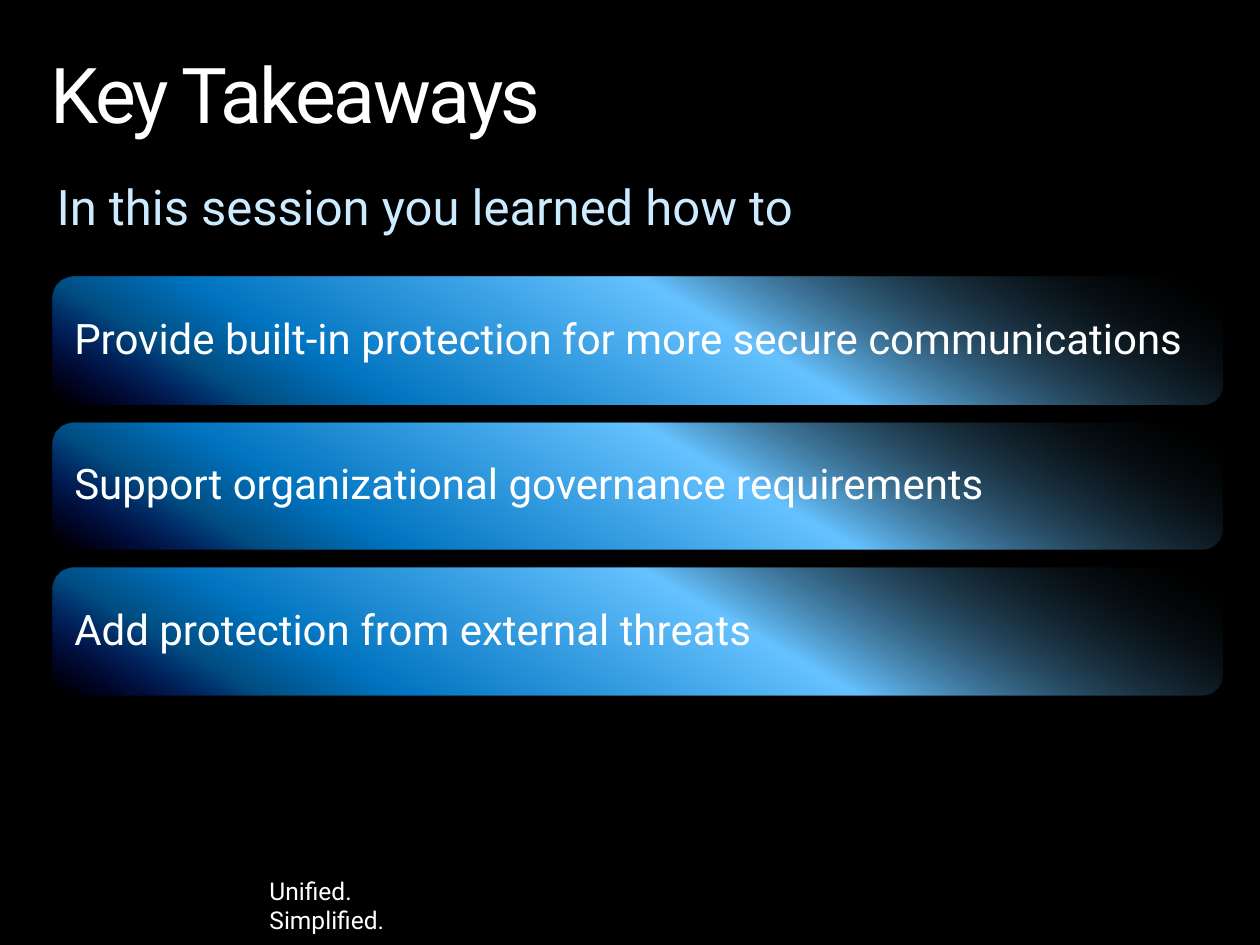
from dataclasses import dataclass

from pptx import Presentation
from pptx.dml.color import RGBColor
from pptx.enum.shapes import MSO_SHAPE
from pptx.enum.text import MSO_ANCHOR, PP_ALIGN
from pptx.oxml import parse_xml
from pptx.oxml.ns import nsdecls, qn
from pptx.util import Inches, Pt


@dataclass(frozen=True)
class Theme:
    font: str = "Roboto"
    background: str = "000000"
    text: str = "FFFFFF"
    subtitle: str = "CCEBFF"
    title_size: int = 44
    subtitle_size: int = 28
    bar_size: int = 24
    tagline_size: int = 14
    # position in percent, colour, opacity in percent
    bar_stops: tuple = ((0, "000000", 0), (42, "66C2FF", 100), (75, "0073BF", 100),
                        (85, "004C80", 100), (99, "050595", 0))
    bar_angle: int = 120


THEME = Theme()
WIDTH, HEIGHT = Inches(10), Inches(7.5)
TAKEAWAYS = (
    "Provide built-in protection for more secure communications",
    "Support organizational governance requirements",
    "Add protection from external threats",
)


def box(x, y, w, h):
    """Turn percentages of the slide into left, top, width and height."""
    return [int(side * share / 100)
            for side, share in zip((WIDTH, HEIGHT, WIDTH, HEIGHT), (x, y, w, h))]


def write(tf, text, size, color=THEME.text, spacing=None, tracking=None, margins=None, wrap=True):
    tf.word_wrap = wrap
    if margins:
        tf.margin_left = tf.margin_right = Inches(margins[0])
        tf.margin_top = tf.margin_bottom = Inches(margins[1])
    p = tf.paragraphs[0]
    p.text = text
    p.alignment = PP_ALIGN.LEFT
    p.line_spacing = spacing
    for r in p.runs:
        r.font.name = THEME.font
        r.font.size = Pt(size)
        r.font.color.rgb = RGBColor.from_string(color)
        if tracking:
            r.font._element.set("spc", str(int(tracking * 100)))


def add_text(s, area, text, size, **style):
    write(s.shapes.add_textbox(*box(*area)).text_frame, text, size, **style)


def fill_gradient(sp, stops, angle):
    """Fill with a linear gradient whose stops may be transparent."""
    gs = "".join(
        f'<a:gs pos="{pos * 1000}"><a:srgbClr val="{color}">'
        f'<a:alpha val="{alpha * 1000}"/></a:srgbClr></a:gs>'
        for pos, color, alpha in stops)
    gradient = parse_xml(
        f'<a:gradFill {nsdecls("a")} rotWithShape="1"><a:gsLst>{gs}</a:gsLst>'
        f'<a:lin ang="{angle * 60000}" scaled="0"/></a:gradFill>')
    sp.fill.background()
    spPr = sp._element.spPr
    spPr.replace(spPr.find(qn("a:noFill")), gradient)


def add_bar(s, area, text):
    sp = s.shapes.add_shape(MSO_SHAPE.ROUNDED_RECTANGLE, *box(*area))
    sp.shadow.inherit = False
    fill_gradient(sp, THEME.bar_stops, THEME.bar_angle)
    sp.line.fill.background()
    tf = sp.text_frame
    tf.vertical_anchor = MSO_ANCHOR.MIDDLE
    write(tf, text, THEME.bar_size, spacing=0.9, margins=(0.12, 0.06))


def main():
    prs = Presentation()
    prs.slide_width, prs.slide_height = WIDTH, HEIGHT
    s = prs.slides.add_slide(prs.slide_layouts[6])
    s.background.fill.solid()
    s.background.fill.fore_color.rgb = RGBColor.from_string(THEME.background)

    add_text(s, (20.4, 92, 18.1, 4.53), "Unified.\vSimplified.", THEME.tagline_size, wrap=False)
    add_text(s, (4, 6, 91.7, 9.6), "Key Takeaways", THEME.title_size,
             spacing=0.9, tracking=-1.5, margins=(0, 0))
    for row, takeaway in enumerate(TAKEAWAYS):
        add_bar(s, (4.2, 29.33 + 15.4 * row, 92.8, 13.47), takeaway)
    add_text(s, (3.5, 18, 85.2, 7.6), "In this session you learned how to",
             THEME.subtitle_size, color=THEME.subtitle)

    prs.save("out.pptx")


if __name__ == "__main__":
    main()
